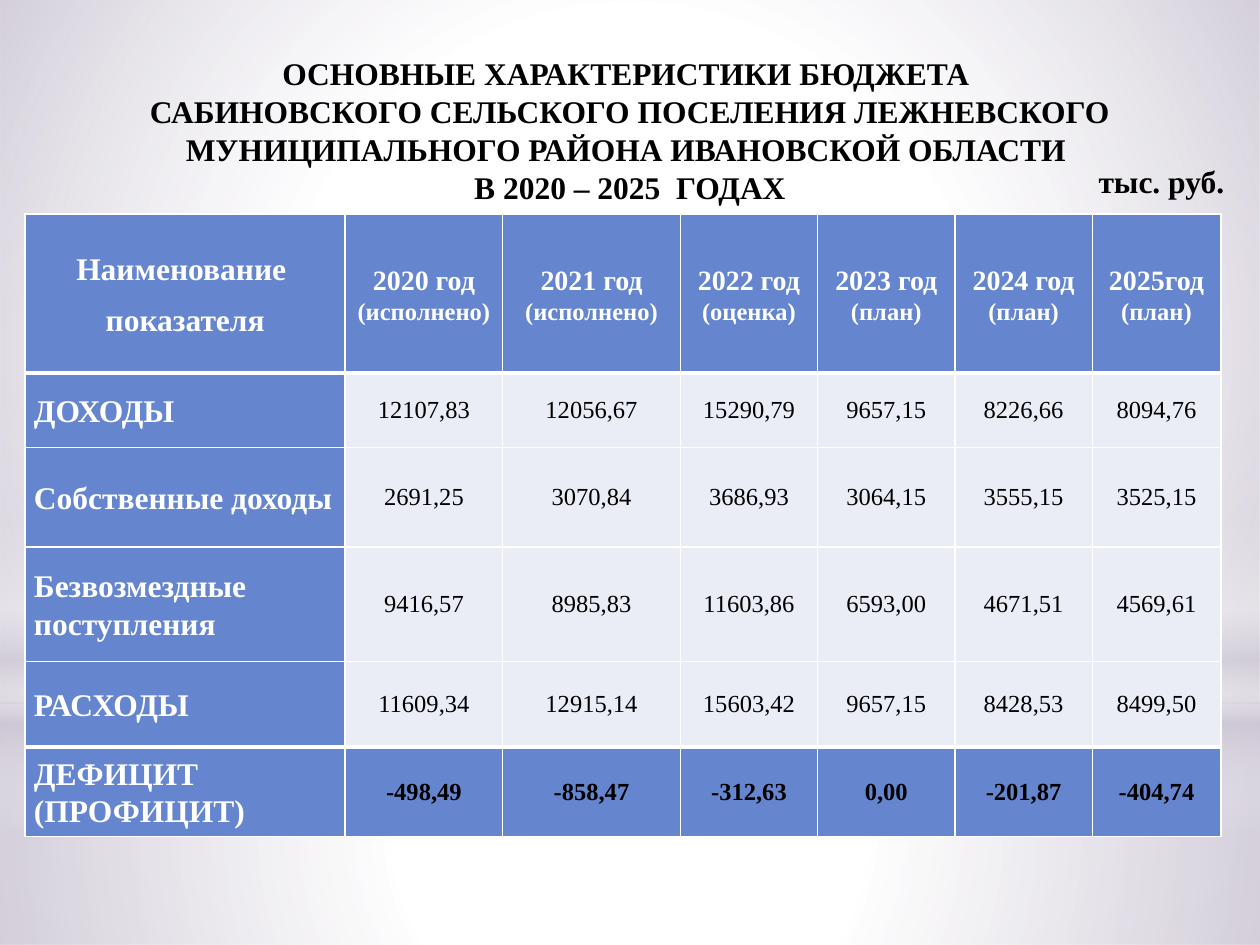
from dataclasses import dataclass
from lxml.etree import SubElement as Sub
from pptx import Presentation
from pptx.dml.color import RGBColor as RGB
from pptx.enum.shapes import MSO_SHAPE as Kind
from pptx.enum.text import MSO_ANCHOR as Anchor, MSO_AUTO_SIZE as Fit, PP_ALIGN as Align
from pptx.oxml.ns import qn
from pptx.util import Inches, Pt


@dataclass(frozen=True)
class Theme:
    font: str = "Times New Roman"
    black: str = "000000"
    white: str = "FFFFFF"
    blue: str = "6585CF"
    pale: str = "EAEDF6"
    mauve: str = "C9C2D1"
    big: int = 18
    mid: int = 16
    small: int = 14


T = Theme()

GLOWS = [
    (Kind.RECTANGLE, (0, 5.58, 10, 1.92), True,
     [(0, T.white, 91), (37, T.white, 76), (100, T.mauve, 79)]),
    (Kind.RECTANGLE, (0, 0, 10, 5.58), True,
     [(0, T.white, 89), (48, T.white, 62), (100, T.mauve, 79)]),
    (Kind.RECTANGLE, (0, 4.12, 10, 2.5), False,
     [(0, T.white, 0), (29, T.white, 30), (45, T.mauve, 40),
      (55, T.white, 26), (65, T.mauve, 60), (100, T.white, 0)]),
    (Kind.OVAL, (0, 1.75, 10, 5.58), True,
     [(0, T.white, 100), (56, T.white, 0)]),
]

TITLE = ("ОСНОВНЫЕ ХАРАКТЕРИСТИКИ БЮДЖЕТА \n"
         "САБИНОВСКОГО СЕЛЬСКОГО ПОСЕЛЕНИЯ ЛЕЖНЕВСКОГО "
         "МУНИЦИПАЛЬНОГО РАЙОНА ИВАНОВСКОЙ ОБЛАСТИ \n"
         "В 2020 – 2025  ГОДАХ")
YEARS = [("2020 год ", "(исполнено)"), ("2021 год ", "(исполнено)"),
         ("2022 год ", "(оценка)"), ("2023 год ", "(план)"),
         ("2024 год ", "(план)"), ("2025год ", "(план)")]
ROWS = [
    ("ДОХОДЫ", "12107,83 12056,67 15290,79 9657,15 8226,66 8094,76"),
    ("Собственные доходы", "2691,25 3070,84 3686,93 3064,15 3555,15 3525,15"),
    ("Безвозмездные поступления", "9416,57 8985,83 11603,86 6593,00 4671,51 4569,61"),
    ("РАСХОДЫ", "11609,34 12915,14 15603,42 9657,15 8428,53 8499,50"),
    ("ДЕФИЦИТ (ПРОФИЦИТ)", "-498,49 -858,47 -312,63 0,00 -201,87 -404,74"),
]
WIDTHS = [2.54, 1.25, 1.41, 1.09, 1.09, 1.09, 1.02]
HEIGHTS = [1.26, 0.59, 0.79, 0.91, 0.68, 0.71]


def style(run, size, color, bold=True):
    font = run.font
    font.name, font.size, font.bold = T.font, Pt(size), bold
    font.color.rgb = RGB.from_string(color)


def add_glow(slide, kind, box, radial, stops):
    shape = slide.shapes.add_shape(kind, *map(Inches, box))
    shape.shadow.inherit = False
    shape.line.fill.background()
    shape.fill.gradient()
    grad = shape.fill._xPr.find(qn("a:gradFill"))
    for node in list(grad):
        grad.remove(node)
    group = Sub(grad, qn("a:gsLst"))
    for place, color, alpha in stops:
        stop = Sub(group, qn("a:gs"), pos=str(place * 1000))
        tint = Sub(stop, qn("a:srgbClr"), val=color)
        Sub(tint, qn("a:alpha"), val=str(alpha * 1000))
    if radial:
        shade = Sub(grad, qn("a:path"), {"path": "circle"})
        Sub(shade, qn("a:fillToRect"), dict.fromkeys("ltrb", "50000"))
    else:
        Sub(grad, qn("a:lin"), ang="5400000", scaled="0")


def set_title(slide):
    title = slide.shapes.title
    slide.shapes._spTree.append(title._element)
    title.left, title.top, title.width, title.height = map(Inches, (0, 0.38, 10, 1.62))
    frame = title.text_frame
    frame.text = TITLE
    frame.word_wrap = True
    frame.auto_size = Fit.SHAPE_TO_FIT_TEXT
    frame.vertical_anchor = Anchor.TOP
    for para in frame.paragraphs:
        para.alignment = Align.CENTER
        for run in para.runs:
            style(run, T.big, T.black)


def add_unit(slide):
    frame = slide.shapes.add_textbox(*map(Inches, (8.62, 1.24, 1.21, 0.4))).text_frame
    frame.text = "тыс. руб."
    frame.word_wrap = False
    frame.auto_size = Fit.SHAPE_TO_FIT_TEXT
    style(frame.paragraphs[0].runs[0], T.big, T.black)


def set_edges(cell, top, bottom):
    props = cell._tc.get_or_add_tcPr()
    for side, width in zip("LRTB", (1, 1, top, bottom)):
        line = Sub(props, qn(f"a:ln{side}"), w=str(Pt(width)))
        Sub(Sub(line, qn("a:solidFill")), qn("a:srgbClr"), val=T.white)


def set_pad(cell, side, top):
    cell.margin_left = cell.margin_right = Inches(side)
    cell.margin_top, cell.margin_bottom = Inches(top), 0
    cell.vertical_anchor = Anchor.MIDDLE


def set_label(cell, lines, align):
    set_pad(cell, 0.07, 0.01)
    frame = cell.text_frame
    for i, parts in enumerate(lines):
        para = frame.add_paragraph() if i else frame.paragraphs[0]
        para.alignment, para.line_spacing, para.space_after = align, 1.07, Pt(8)
        for text, size in parts:
            run = para.add_run()
            run.text = text
            style(run, size, T.white)


def set_value(cell, text, bold):
    set_pad(cell, 0, 0)
    cell.text_frame.text = text
    para = cell.text_frame.paragraphs[0]
    para.alignment = Align.CENTER
    style(para.runs[0], T.small, T.black, bold)


def add_grid(slide):
    table = slide.shapes.add_table(
        len(HEIGHTS), len(WIDTHS), *map(Inches, (0.2, 1.7, 9.49, 4.94))).table
    for col, width in zip(table.columns, WIDTHS):
        col.width = Inches(width)
    for row, height in zip(table.rows, HEIGHTS):
        row.height = Inches(height)
    last = len(ROWS)
    for r in range(last + 1):
        for c in range(len(WIDTHS)):
            cell = table.cell(r, c)
            set_edges(cell, 3 if r in (1, last) else 1, 3 if r in (0, last - 1) else 1)
            cell.fill.solid()
            dark = r in (0, last) or c == 0
            cell.fill.fore_color.rgb = RGB.from_string(T.blue if dark else T.pale)
    set_label(table.cell(0, 0), [[("Наименование ", T.big)], [("показателя", T.big)]],
              Align.CENTER)
    for c, (year, state) in enumerate(YEARS, 1):
        set_label(table.cell(0, c), [[(year, T.mid), (state, T.small)]], Align.CENTER)
    for r, (name, values) in enumerate(ROWS, 1):
        set_label(table.cell(r, 0), [[(name, T.big)]], Align.LEFT)
        for c, value in enumerate(values.split(), 1):
            set_value(table.cell(r, c), value, r == last)


def main():
    deck = Presentation()
    deck.slide_width, deck.slide_height = Inches(10), Inches(7.5)
    slide = deck.slides.add_slide(deck.slide_layouts[5])
    for glow in GLOWS:
        add_glow(slide, *glow)
    set_title(slide)
    add_unit(slide)
    add_grid(slide)
    deck.save("out.pptx")


if __name__ == "__main__":
    main()
